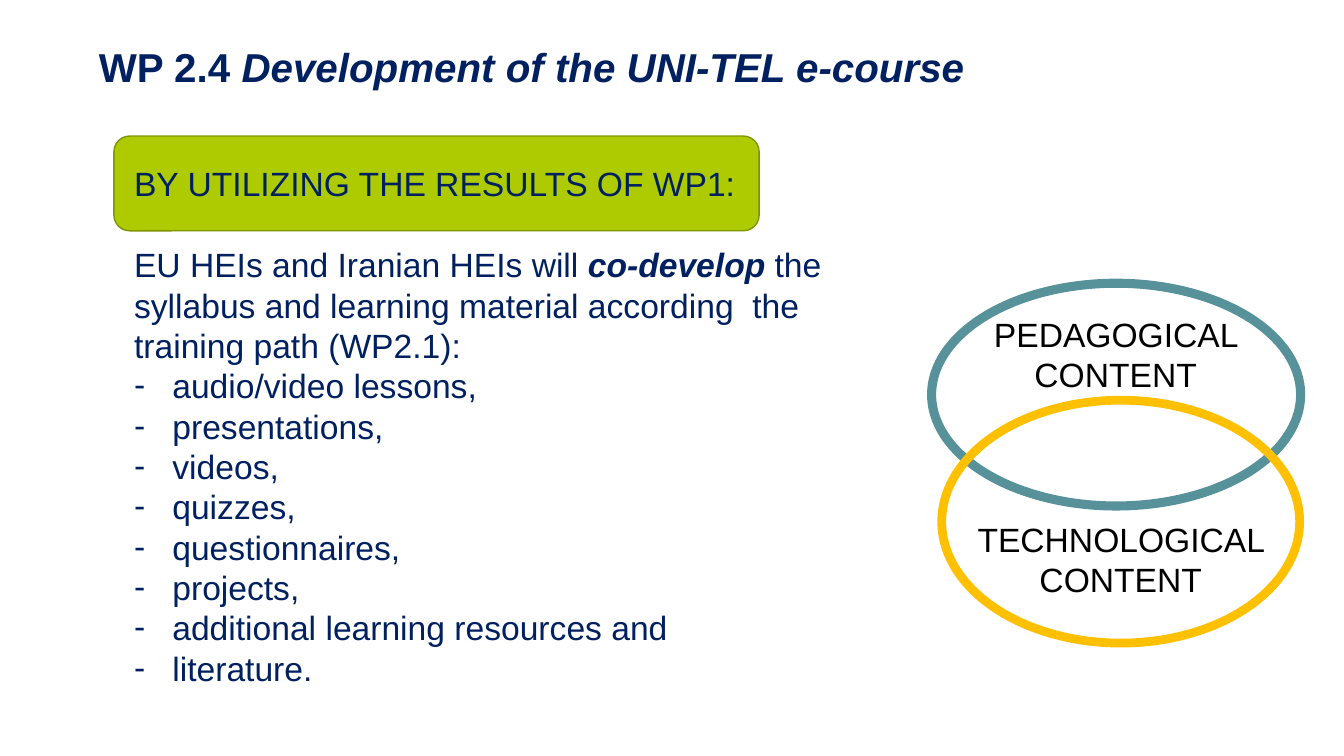
"""Build the slide on developing the e-course of work package 2.4."""
from dataclasses import dataclass

from lxml.etree import SubElement as Sub
from pptx import Presentation
from pptx.dml.color import RGBColor as RGB
from pptx.enum.shapes import MSO_SHAPE as Kind
from pptx.enum.text import MSO_ANCHOR as Anchor, MSO_AUTO_SIZE as Fit, PP_ALIGN as Align
from pptx.oxml.ns import qn
from pptx.util import Inches, Pt


@dataclass(frozen=True)
class Theme:
    """Colours, font and sizes of the slide."""
    font: str = "Arial"
    navy: str = "002060"
    black: str = "000000"
    lime: str = "ADCB00"
    moss: str = "7E9400"
    teal: str = "579199"
    gold: str = "FFC000"
    head: float = 28.8
    text: float = 24
    gap: float = 29


LOOK = Theme()
TITLE = [("WP 2.4 ", ""), ("Development of the UNI-TEL e-course", "i")]
LEAD = [("BY UTILIZING THE RESULTS OF WP1:", "")]
INTRO = [
    ("EU HEIs and Iranian HEIs will ", ""),
    ("co-develop", "bi"),
    (" the syllabus and learning material according  the training path (WP2.1):", ""),
]
ITEMS = [
    "audio/video lessons,", "presentations,", "videos,", "quizzes,",
    "questionnaires,", "projects,", "additional learning resources and", "literature.",
]
BAND = (1.13, 1.35, 6.4, 0.94)
RINGS = [
    ("PEDAGOGICAL CONTENT", (9.24, 2.81, 3.66, 2.21), LOOK.teal, 6.5, (9.47, 3.06, 3.19, 0.91)),
    ("TECHNOLOGICAL CONTENT", (9.34, 3.97, 3.55, 2.41), LOOK.gold, 6.25, (9.52, 5.1, 3.19, 0.91)),
]


def place(shape, box):
    """Move and size a shape in inches."""
    shape.left, shape.top, shape.width, shape.height = map(Inches, box)


def draw(slide, kind, box, line, width, fill=None):
    """Add an outlined shape, filled if a colour is given."""
    shape = slide.shapes.add_shape(kind, *map(Inches, box))
    shape.shadow.inherit = False
    if fill:
        shape.fill.solid()
        shape.fill.fore_color.rgb = RGB.from_string(fill)
    else:
        shape.fill.background()
    shape.line.color.rgb = RGB.from_string(line)
    shape.line.width = Pt(width)
    return shape


def mark(para, dash):
    """Give a paragraph a hanging dash or no bullet."""
    props = para._p.get_or_add_pPr()
    step = Inches(0.38) if dash else 0
    props.set("marL", str(step))
    props.set("indent", str(-step))
    if dash:
        Sub(Sub(props, qn("a:buClr")), qn("a:srgbClr")).set("val", LOOK.navy)
        Sub(props, qn("a:buFont")).set("typeface", LOOK.font)
        Sub(props, qn("a:buChar")).set("char", "-")
    else:
        Sub(props, qn("a:buNone"))


def write(para, runs, size=LOOK.text, color=LOOK.navy, bold=False,
          align=Align.LEFT, space=0, lines=1.0, dash=False):
    """Fill a paragraph with runs in the given format."""
    mark(para, dash)
    para.alignment = align
    para.space_before, para.space_after = Pt(space), Pt(0)
    para.line_spacing = lines
    for text, style in runs:
        run = para.add_run()
        run.text = text
        font = run.font
        font.name, font.size = LOOK.font, Pt(size)
        font.bold = bold or "b" in style
        font.italic = "i" in style
        font.color.rgb = RGB.from_string(color)


def frame(shape, anchor=Anchor.TOP):
    """Return the wrapped text frame of a shape."""
    area = shape.text_frame
    area.word_wrap = True
    area.auto_size = Fit.NONE
    area.vertical_anchor = anchor
    return area


def main():
    """Make the deck and save it."""
    deck = Presentation()
    deck.slide_width, deck.slide_height = Inches(13.33), Inches(7.5)
    slide = deck.slides.add_slide(deck.slide_layouts[1])
    title, body = slide.shapes.title, slide.placeholders[1]

    place(title, (0.88, 0.48, 9.24, 0.48))
    write(frame(title, Anchor.BOTTOM).paragraphs[0], TITLE,
          size=LOOK.head, bold=True, lines=0.9)

    band = draw(slide, Kind.ROUNDED_RECTANGLE, BAND, LOOK.moss, 1, LOOK.lime)
    body.element.addprevious(band.element)

    place(body, (1.23, 1.57, 7.92, 5.6))
    area = frame(body)
    write(area.paragraphs[0], LEAD)
    write(area.add_paragraph(), INTRO, space=LOOK.gap)
    for item in ITEMS:
        write(area.add_paragraph(), [(item, "")], dash=True)

    for name, ring, color, width, label in RINGS:
        draw(slide, Kind.OVAL, ring, color, width)
        note = slide.shapes.add_textbox(*map(Inches, label))
        write(frame(note).paragraphs[0], [(name, "")],
              color=LOOK.black, align=Align.CENTER)

    deck.save("out.pptx")


if __name__ == "__main__":
    main()
